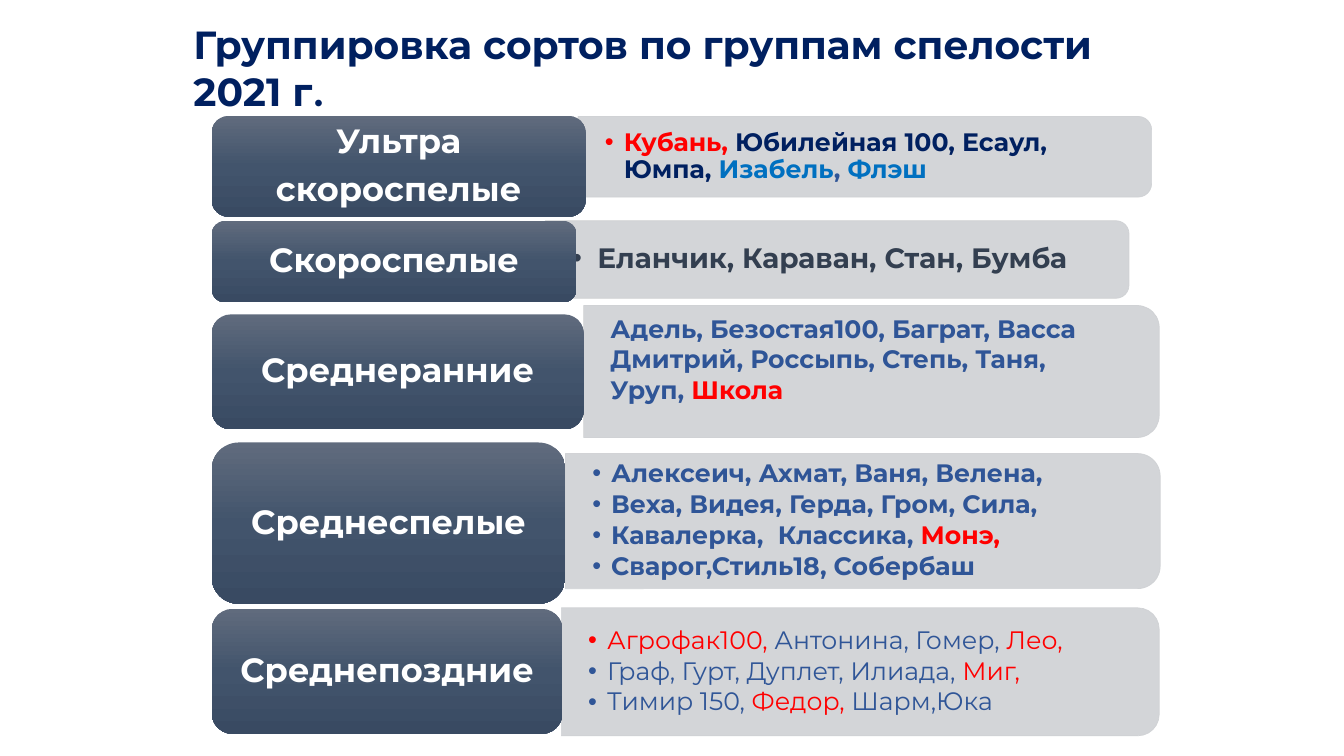
import copy
import dataclasses

import pptx
import pptx.dml.color
import pptx.enum.shapes
import pptx.enum.text
import pptx.oxml
import pptx.oxml.ns
import pptx.util

Pt = pptx.util.Pt
RGB = pptx.dml.color.RGBColor.from_string
qn = pptx.oxml.ns.qn
MIDDLE = pptx.enum.text.MSO_ANCHOR.MIDDLE
ALIGN = pptx.enum.text.PP_ALIGN
SHAPES = pptx.enum.shapes.MSO_SHAPE
NAMESPACE = 'xmlns:a="http://schemas.openxmlformats.org/drawingml/2006/main"'


@dataclasses.dataclass(frozen=True)
class Theme:
    font: str = "Montserrat"
    end_font: str = "Calibri"
    navy: str = "002060"
    red: str = "FF0000"
    sky: str = "0070C0"
    blue: str = "2F5597"
    slate: str = "333F50"
    white: str = "FFFFFF"
    panel: str = "CFD1D4"
    gradient: tuple = ((0, "606B7D"), (50, "42546C"), (100, "394A62"))
    title_size: int = 28
    end_size: int = 32
    label_size: int = 24
    large_size: int = 20
    body_size: int = 18


@dataclasses.dataclass(frozen=True)
class Group:
    label: tuple
    label_box: tuple
    varieties: tuple
    panel_box: tuple
    size: int
    bold: bool = True
    indent: float = 13.5
    bulleted: bool = True


T = Theme()

GROUPS = (
    Group(("Ультра", "скороспелые"), (151.2, 82.8, 267.1, 72),
          ((("Кубань, ", T.red), ("Юбилейная 100, Есаул, Юмпа, ", T.navy),
            ("Изабель", T.sky), (", ", T.blue), ("Флэш", T.sky)),),
          (412.9, 83.2, 409.7, 57.6), T.body_size),
    Group(("Скороспелые",), (151.2, 157.7, 260.6, 58.3),
          ((("Еланчик, Караван, Стан, Бумба", T.slate),),),
          (389.5, 157.7, 416.9, 55.4), T.large_size, indent=18),
    Group(("Среднеранние",), (151.2, 224.6, 265.7, 82.1),
          ((("Адель, Безостая100, Баграт, Васса Дмитрий, Россыпь, Степь, Таня,", T.blue),),
           (("Уруп,", T.blue), (" Школа", T.red))),
          (416.9, 218.2, 411.1, 94.3), T.body_size, bulleted=False),
    Group(("Среднеспелые",), (151.2, 316.1, 252.7, 115.2),
          ((("Алексеич, Ахмат, Ваня, Велена,", T.blue),),
           (("Веха, Видея, Герда, Гром, Сила,", T.blue),),
           (("Кавалерка,  Классика, ", T.blue), ("Монэ,", T.red)),
           (("Сварог,Стиль18, Собербаш", T.blue),)),
          (403.9, 324, 424.8, 96.5), T.body_size),
    Group(("Среднепоздние",), (151.2, 434.9, 250.6, 89.3),
          ((("Агрофак100, ", T.red), ("Антонина, Гомер, ", T.blue), ("Лео,", T.red)),
           (("Граф, Гурт, Дуплет, Илиада, ", T.blue), ("Миг,", T.red)),
           (("Тимир 150, ", T.blue), ("Федор, ", T.red), ("Шарм,Юка", T.blue))),
          (401, 434.2, 427, 91.4), T.body_size, bold=False),
)


def style_font(font, size, color, bold=True, name=T.font):
    font.name = name
    font.size = Pt(size)
    font.bold = bold
    font.color.rgb = RGB(color)


def add_bullet(paragraph, indent):
    properties = paragraph._p.get_or_add_pPr()
    properties.set("marL", str(Pt(indent)))
    properties.set("indent", str(-Pt(indent)))
    for element in ('buFont {} typeface="Arial"', 'buChar {} char="•"'):
        properties.append(pptx.oxml.parse_xml(f"<a:{element.format(NAMESPACE)}/>"))


def draw_title(slide, box):
    heading = slide.shapes.title
    heading.left, heading.top, heading.width, heading.height = map(Pt, box)
    frame = heading.text_frame
    frame.word_wrap = True
    frame.auto_size = pptx.enum.text.MSO_AUTO_SIZE.NONE
    frame.vertical_anchor = MIDDLE
    paragraph = frame.paragraphs[0]
    paragraph.alignment = ALIGN.LEFT
    paragraph.line_spacing = 0.9
    for text, size, name in (
        ("Группировка сортов по группам спелости 2021 г", T.title_size, T.font),
        (".", T.end_size, T.end_font),
    ):
        run = paragraph.add_run()
        run.text = text
        style_font(run.font, size, T.navy, name=name)


def draw_panel(slide, box):
    left, top, width, height = box
    panel = slide.shapes.add_shape(
        SHAPES.ROUND_2_SAME_RECTANGLE,
        Pt(left + (width - height) / 2), Pt(top + (height - width) / 2),
        Pt(height), Pt(width))
    panel.rotation = 90
    panel.shadow.inherit = False
    panel.fill.solid()
    panel.fill.fore_color.rgb = RGB(T.panel)
    panel.line.color.rgb = RGB(T.panel)
    panel.line.width = Pt(0.5)
    for color in panel._element.spPr.iter(qn("a:srgbClr")):
        color.append(pptx.oxml.parse_xml(f'<a:alpha {NAMESPACE} val="90000"/>'))


def draw_varieties(slide, box, group):
    left, top, width, height = box
    inset = height * 0.05
    varieties = slide.shapes.add_textbox(
        Pt(left), Pt(top + inset), Pt(width - inset), Pt(height - 2 * inset))
    frame = varieties.text_frame
    frame.word_wrap = True
    frame.vertical_anchor = MIDDLE
    frame.margin_left = frame.margin_right = Pt(19.2)
    frame.margin_top = Pt(10 if group.bulleted else 0)
    frame.margin_bottom = Pt(10 if group.bulleted else 18)
    for index, parts in enumerate(group.varieties):
        paragraph = frame.add_paragraph() if index else frame.paragraphs[0]
        if group.bulleted:
            paragraph.line_spacing = 0.9
            paragraph.space_after = Pt(group.size * 0.15)
            add_bullet(paragraph, group.indent)
        main_color = parts[0][1]
        style_font(paragraph.font, group.size, main_color, group.bold)
        for text, color in parts:
            run = paragraph.add_run()
            run.text = text
            if color != main_color:
                run.font.color.rgb = RGB(color)


def draw_label(slide, box, lines):
    label = slide.shapes.add_shape(SHAPES.ROUNDED_RECTANGLE, *map(Pt, box))
    label.shadow.inherit = False
    label.line.fill.background()
    label.fill.gradient()
    label.fill.gradient_angle = 270
    stops = label._element.spPr.find(".//" + qn("a:gsLst"))
    stops.append(copy.deepcopy(stops[0]))
    for stop, (position, color) in zip(label.fill.gradient_stops, T.gradient):
        stop.position = position / 100
        stop.color.rgb = RGB(color)
    frame = label.text_frame
    frame.word_wrap = True
    frame.vertical_anchor = MIDDLE
    for index, line in enumerate(lines):
        paragraph = frame.add_paragraph() if index else frame.paragraphs[0]
        paragraph.text = line
        paragraph.alignment = ALIGN.CENTER
        paragraph.line_spacing = 0.9
        paragraph.space_after = Pt(T.label_size * 0.35)
        style_font(paragraph.font, T.label_size, T.white)


def main():
    presentation = pptx.Presentation()
    presentation.slide_width = Pt(960)
    presentation.slide_height = Pt(540)
    slide = presentation.slides.add_slide(presentation.slide_layouts[5])
    draw_title(slide, (131, 5.8, 697.7, 90))
    for group in GROUPS:
        draw_panel(slide, group.panel_box)
        draw_varieties(slide, group.panel_box, group)
        draw_label(slide, group.label_box, group.label)
    presentation.save("out.pptx")


if __name__ == "__main__":
    main()
